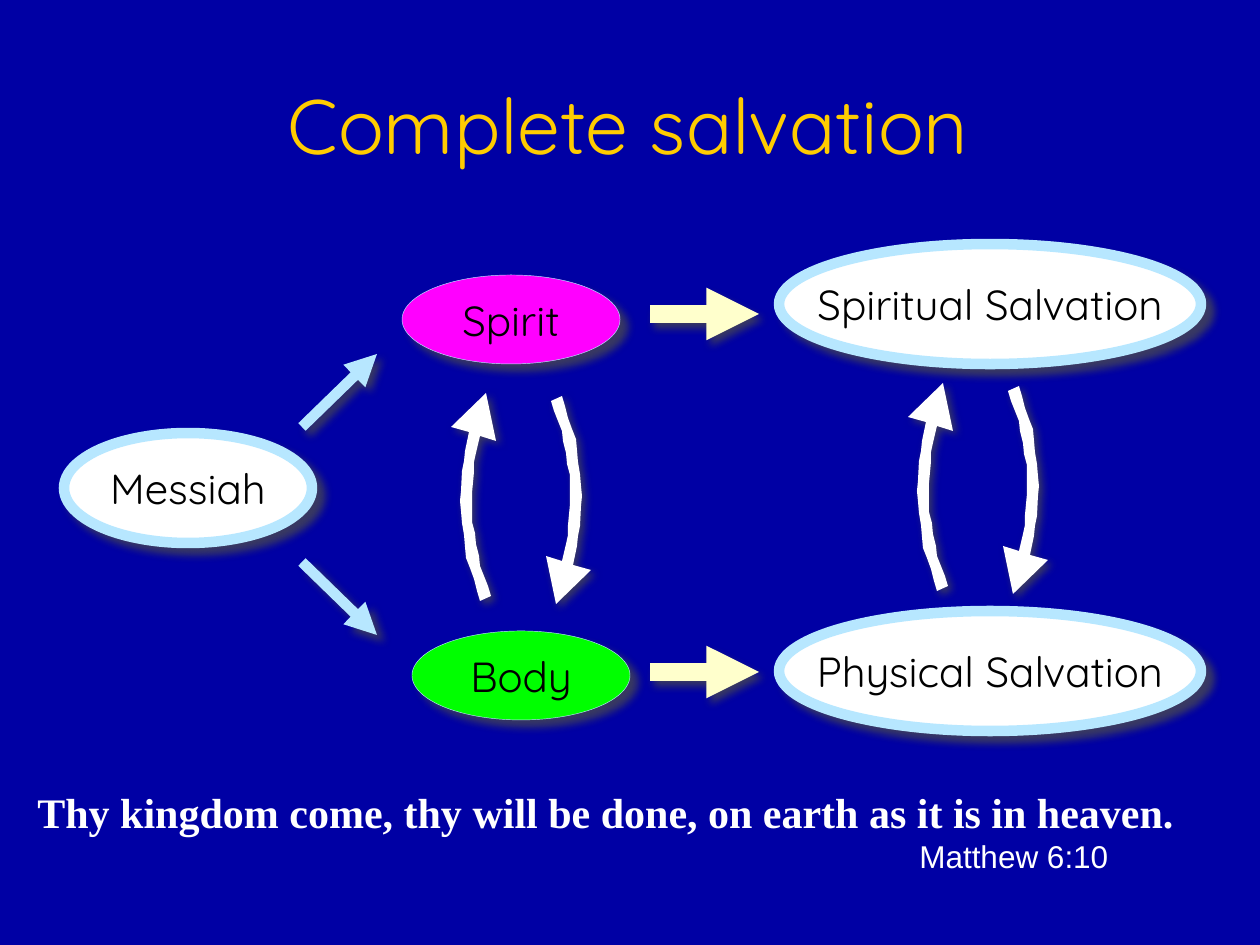
from dataclasses import dataclass

from lxml import etree
from pptx import Presentation
from pptx import util as u
from pptx.dml.color import RGBColor
from pptx.enum import shapes, text
from pptx.oxml import ns

PX = u.Inches(1) / 126


@dataclass(frozen=True)
class Theme:
    background: str = "0000A4"
    title: str = "FFCC00"
    white: str = "FFFFFF"
    ink: str = "000000"
    sky: str = "B7E7FF"
    cream: str = "FFFFCC"
    magenta: str = "FF00FF"
    green: str = "00FF00"
    shadow: str = "4D4D4D"
    heading: str = "Quicksand"
    verse: str = "Times New Roman"
    source: str = "Arial"
    title_size: int = 44
    label_size: int = 24
    source_size: int = 18
    rim: float = 6
    hairline: float = 0.25
    wide_arrow: float = 10


THEME = Theme()

TITLE = ("Complete salvation", (42, 32, 1173, 183))
VERSE = "Thy kingdom come, thy will be done, on earth as it is in heaven."
SOURCE = "Matthew 6:10"
VERSE_BOX = (25, 780, 1235, 142)
SOURCE_INDENT = 882

# label, (left, top, width, height), fill, line width
OVALS = [
    ("Messiah", (64, 433, 248, 110), THEME.white, THEME.rim),
    ("Spirit", (402, 275, 218, 89), THEME.magenta, THEME.hairline),
    ("Body", (412, 631, 218, 89), THEME.green, THEME.hairline),
    ("Spiritual Salvation", (779, 244, 422, 120), THEME.white, THEME.rim),
    ("Physical Salvation", (779, 611, 422, 120), THEME.white, THEME.rim),
]

# start and end, colour, line width, shadow distance, shadow angle
ARROWS = [
    ((302, 562, 377, 635), THEME.sky, THEME.rim, 5.7, 45),
    ((302, 427, 377, 354), THEME.sky, THEME.rim, 4.2, 45),
    ((650, 314, 759, 314), THEME.cream, THEME.wide_arrow, 3.7, 55),
    ((650, 672, 759, 672), THEME.cream, THEME.wide_arrow, 3.7, 55),
]

# The upward curved arrow; its partner is the same outline turned half round.
CURVE_SIZE = (45, 208)
CURVE = [
    (29, 43), (25, 60), (23, 69), (23, 79), (21, 100), (21, 117), (21, 129), (24, 140),
    (25, 151), (28, 163), (29, 173), (33, 183), (37, 193), (40, 203), (29, 208), (26, 198),
    (23, 186), (19, 175), (15, 165), (14, 154), (13, 142), (11, 130), (10, 118), (9, 108),
    (10, 98), (11, 78), (13, 68), (14, 58), (18, 39), (0, 34), (35, 0), (45, 48),
]
CURVE_PAIRS = [(451, 393), (908, 383)]
PARTNER_OFFSET = (95, 3)


def emu(*lengths):
    return [round(length * PX) for length in lengths]


def rgb(colour):
    return RGBColor.from_string(colour)


def set_font(paragraph, name, size, colour, bold=False):
    for span in paragraph.runs:
        span.font.name = name
        span.font.size = u.Pt(size)
        span.font.bold = bold
        span.font.color.rgb = rgb(colour)


def add_shadow(properties, distance, angle=45):
    """Give shape, connector or run properties a soft outer shadow."""
    effects = properties.find(ns.qn("a:effectLst"))
    if effects is None:
        effects = etree.Element(ns.qn("a:effectLst"))
        fonts = properties.find(ns.qn("a:latin"))
        if fonts is None:
            properties.append(effects)
        else:
            fonts.addprevious(effects)
    outer = etree.SubElement(
        effects, ns.qn("a:outerShdw"), blurRad=str(u.Pt(5)),
        dist=str(u.Pt(distance)), dir=str(angle * 60000), algn="ctr", rotWithShape="0")
    colour = etree.SubElement(outer, ns.qn("a:srgbClr"), val=THEME.shadow)
    etree.SubElement(colour, ns.qn("a:alpha"), val="75000")


def add_title(page, wording, bounds):
    box = page.shapes.title
    box.left, box.top, box.width, box.height = emu(*bounds)
    frame = box.text_frame
    frame.text = wording
    frame.vertical_anchor = text.MSO_ANCHOR.MIDDLE
    para = frame.paragraphs[0]
    para.alignment = text.PP_ALIGN.CENTER
    set_font(para, THEME.heading, THEME.title_size, THEME.title)
    add_shadow(para.runs[0].font._element, 2.8)


def add_oval(page, label, bounds, fill, width):
    oval = page.shapes.add_shape(shapes.MSO_SHAPE.OVAL, *emu(*bounds))
    oval.fill.solid()
    oval.fill.fore_color.rgb = rgb(fill)
    oval.line.color.rgb = rgb(THEME.sky)
    oval.line.width = u.Pt(width)
    oval.shadow.inherit = False
    add_shadow(oval._element.spPr, 5.7)
    frame = oval.text_frame
    frame.text = label
    frame.word_wrap = False
    frame.vertical_anchor = text.MSO_ANCHOR.MIDDLE
    para = frame.paragraphs[0]
    para.alignment = text.PP_ALIGN.CENTER
    set_font(para, THEME.heading, THEME.label_size, THEME.ink)


def add_curve(group, outline, left, top):
    points = [(left + x, top + y) for x, y in outline]
    builder = group.shapes.build_freeform(*points[0], scale=PX)
    builder.add_line_segments(points[1:], close=True)
    curve = builder.convert_to_shape()
    curve.fill.solid()
    curve.fill.fore_color.rgb = rgb(THEME.white)
    curve.line.fill.background()
    curve.shadow.inherit = False
    add_shadow(curve._element.spPr, 2.8)


def add_curve_pair(page, left, top):
    group = page.shapes.add_group_shape()
    width, height = CURVE_SIZE
    turned = [(width - x, height - y) for x, y in CURVE]
    add_curve(group, CURVE, left, top)
    add_curve(group, turned, left + PARTNER_OFFSET[0], top + PARTNER_OFFSET[1])


def add_arrow(page, ends, colour, width, distance, angle):
    arrow = page.shapes.add_connector(shapes.MSO_CONNECTOR.STRAIGHT, *emu(*ends))
    arrow.line.color.rgb = rgb(colour)
    arrow.line.width = u.Pt(width)
    etree.SubElement(arrow.line._get_or_add_ln(), ns.qn("a:tailEnd"), type="triangle")
    add_shadow(arrow._element.spPr, distance, angle)


def add_verse(page):
    frame = page.shapes.add_textbox(*emu(*VERSE_BOX)).text_frame
    frame.word_wrap = True
    frame.auto_size = text.MSO_AUTO_SIZE.SHAPE_TO_FIT_TEXT
    frame.text = VERSE
    set_font(frame.paragraphs[0], THEME.verse, THEME.label_size, THEME.white, bold=True)
    para = frame.add_paragraph()
    para.text = SOURCE
    para._p.get_or_add_pPr().set("marL", str(emu(SOURCE_INDENT)[0]))
    set_font(para, THEME.source, THEME.source_size, THEME.white)


def main():
    deck = Presentation()
    deck.slide_width, deck.slide_height = emu(1260, 945)
    page = deck.slides.add_slide(deck.slide_layouts[5])
    page.background.fill.solid()
    page.background.fill.fore_color.rgb = rgb(THEME.background)
    add_title(page, *TITLE)
    for oval in OVALS:
        add_oval(page, *oval)
    for corner in CURVE_PAIRS:
        add_curve_pair(page, *corner)
    for arrow in ARROWS:
        add_arrow(page, *arrow)
    add_verse(page)
    deck.save("out.pptx")


if __name__ == "__main__":
    main()
